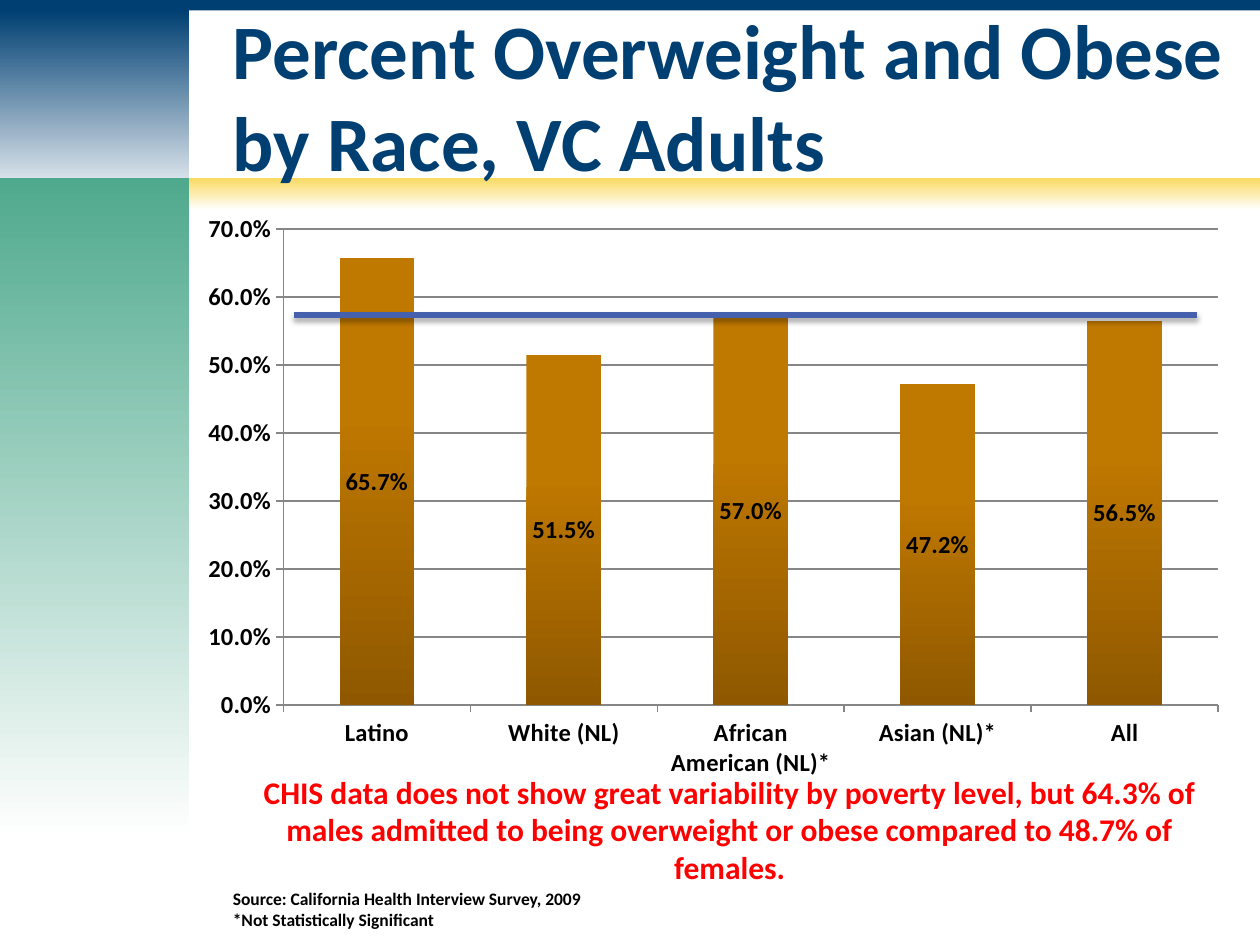
from lxml import etree
from pptx import Presentation
from pptx.chart.data import CategoryChartData
from pptx.dml.color import RGBColor
from pptx.enum.chart import XL_CHART_TYPE as ChartType, XL_LABEL_POSITION as LabelPos
from pptx.enum.chart import XL_TICK_MARK as Tick
from pptx.enum.shapes import MSO_CONNECTOR as Connector, MSO_SHAPE as Shape
from pptx.enum.text import MSO_ANCHOR as Anchor, PP_ALIGN as Align
from pptx.oxml import parse_xml
from pptx.oxml.ns import nsdecls, qn
from pptx.util import Pt

PX = 9525
FONT = "Calibri"
COLORS = {
    "navy": "003F72", "yellow": "FADA63", "green": "4FA98D", "white": "FFFFFF",
    "black": "000000", "red": "FF0000", "blue": "4560AD", "grid": "868686",
    "bar_top": "BF7800", "bar_bottom": "8F5800",
}


def rgb(name):
    return RGBColor.from_string(COLORS[name])


class SlideBuilder:
    def __init__(self, slide):
        self.slide = slide

    def style_font(self, font, size, color="black"):
        font.name, font.size, font.bold = FONT, Pt(size), True
        font.color.rgb = rgb(color)

    def shade(self, fill, top, bottom, start=0):
        fill.gradient()
        fill.gradient_angle = 270
        for stop, color, position in zip(fill.gradient_stops, (top, bottom), (start, 1)):
            stop.color.rgb = rgb(color)
            stop.position = position

    def band(self, box, color, fade=True):
        band = self.slide.shapes.add_shape(Shape.RECTANGLE, *(n * PX for n in box))
        band.shadow.inherit = False
        band.line.fill.background()
        if fade:
            self.shade(band.fill, color, "white")
        else:
            band.fill.solid()
            band.fill.fore_color.rgb = rgb(color)

    def text(self, box, content, size, color, align=Align.LEFT, anchor=Anchor.TOP):
        frame = self.slide.shapes.add_textbox(*(n * PX for n in box)).text_frame
        frame.word_wrap = True
        frame.vertical_anchor = anchor
        frame.text = content
        for paragraph in frame.paragraphs:
            paragraph.alignment = align
            for run in paragraph.runs:
                self.style_font(run.font, size, color)

    def column_chart(self, box, rates, layout):
        data = CategoryChartData(number_format="0.0%")
        data.categories = list(rates)
        data.add_series("Series 1", list(rates.values()))
        chart = self.slide.shapes.add_chart(
            ChartType.COLUMN_CLUSTERED, *(n * PX for n in box), data).chart
        chart.has_legend = chart.has_title = False
        self.style_font(chart.font, 14)

        plot = chart.plots[0]
        plot.vary_by_categories = False
        plot.gap_width = 150
        self.shade(plot.series[0].format.fill, "bar_top", "bar_bottom", 0.35)
        plot.has_data_labels = True
        labels = plot.data_labels
        labels.show_value = True
        labels.position = LabelPos.CENTER
        labels.number_format, labels.number_format_is_linked = "0.0%", False
        self.style_font(labels.font, 14)

        values = chart.value_axis
        values.minimum_scale, values.maximum_scale, values.major_unit = 0, 0.7, 0.1
        values.tick_labels.number_format = "0.0%"
        values.tick_labels.number_format_is_linked = False
        values.has_major_gridlines = True
        for axis in (values, chart.category_axis):
            axis.major_tick_mark, axis.minor_tick_mark = Tick.OUTSIDE, Tick.NONE
        for part in (values, values.major_gridlines, chart.category_axis):
            part.format.line.color.rgb = rgb("grid")
            part.format.line.width = Pt(0.75)
        self.place_plot(chart, layout)

    def place_plot(self, chart, layout):
        area = chart.element.find(".//" + qn("c:plotArea"))
        for old in area.findall(qn("c:layout")):
            area.remove(old)
        sizes = "".join(f'<c:{key} val="{value}"/>' for key, value in layout.items())
        area.insert(0, parse_xml(
            f'<c:layout {nsdecls("c")}><c:manualLayout><c:layoutTarget val="inner"/>'
            f'<c:xMode val="edge"/><c:yMode val="edge"/>{sizes}'
            '</c:manualLayout></c:layout>'))

    def shadowed_line(self, ends, color, width):
        line = self.slide.shapes.add_connector(Connector.STRAIGHT, *(n * PX for n in ends))
        line.line.color.rgb = rgb(color)
        line.line.width = Pt(width)
        effects = etree.SubElement(line.element.spPr, qn("a:effectLst"))
        shadow = etree.SubElement(effects, qn("a:outerShdw"), blurRad=str(Pt(3.1)),
                                  dist=str(Pt(1.8)), dir="5400000", rotWithShape="0")
        tint = etree.SubElement(shadow, qn("a:srgbClr"), val=COLORS["black"])
        etree.SubElement(tint, qn("a:alpha"), val="35000")


def main():
    deck = Presentation()
    deck.slide_width, deck.slide_height = 960 * PX, 720 * PX
    page = SlideBuilder(deck.slides.add_slide(deck.slide_layouts[6]))

    page.band((0, 8, 144, 152), "navy")
    page.band((48, 136, 912, 24), "yellow")
    page.band((0, 0, 960, 8), "navy", fade=False)
    page.band((0, 136, 144, 504), "green")

    page.text((168, 16, 784, 112), "Percent Overweight and Obese by Race, VC Adults",
              44, "navy", anchor=Anchor.MIDDLE)
    overweight_rates = {
        "Latino": 0.657, "White (NL)": 0.515, "African American (NL)*": 0.57,
        "Asian (NL)*": 0.472, "All": 0.565,
    }
    page.column_chart((144, 152, 800, 448), overweight_rates,
                      {"x": 0.09, "y": 0.05, "w": 0.89, "h": 0.81})
    page.text((168, 672, 488, 59),
              "Source: California Health Interview Survey, 2009\n*Not Statistically Significant",
              10, "black")
    page.shadowed_line((224, 240, 912, 240), "blue", 3)
    page.text((168, 584, 776, 97),
              "CHIS data does not show great variability by poverty level, but 64.3% of males "
              "admitted to being overweight or obese compared to 48.7% of females.",
              18, "red", align=Align.CENTER)
    deck.save("out.pptx")


if __name__ == "__main__":
    main()
